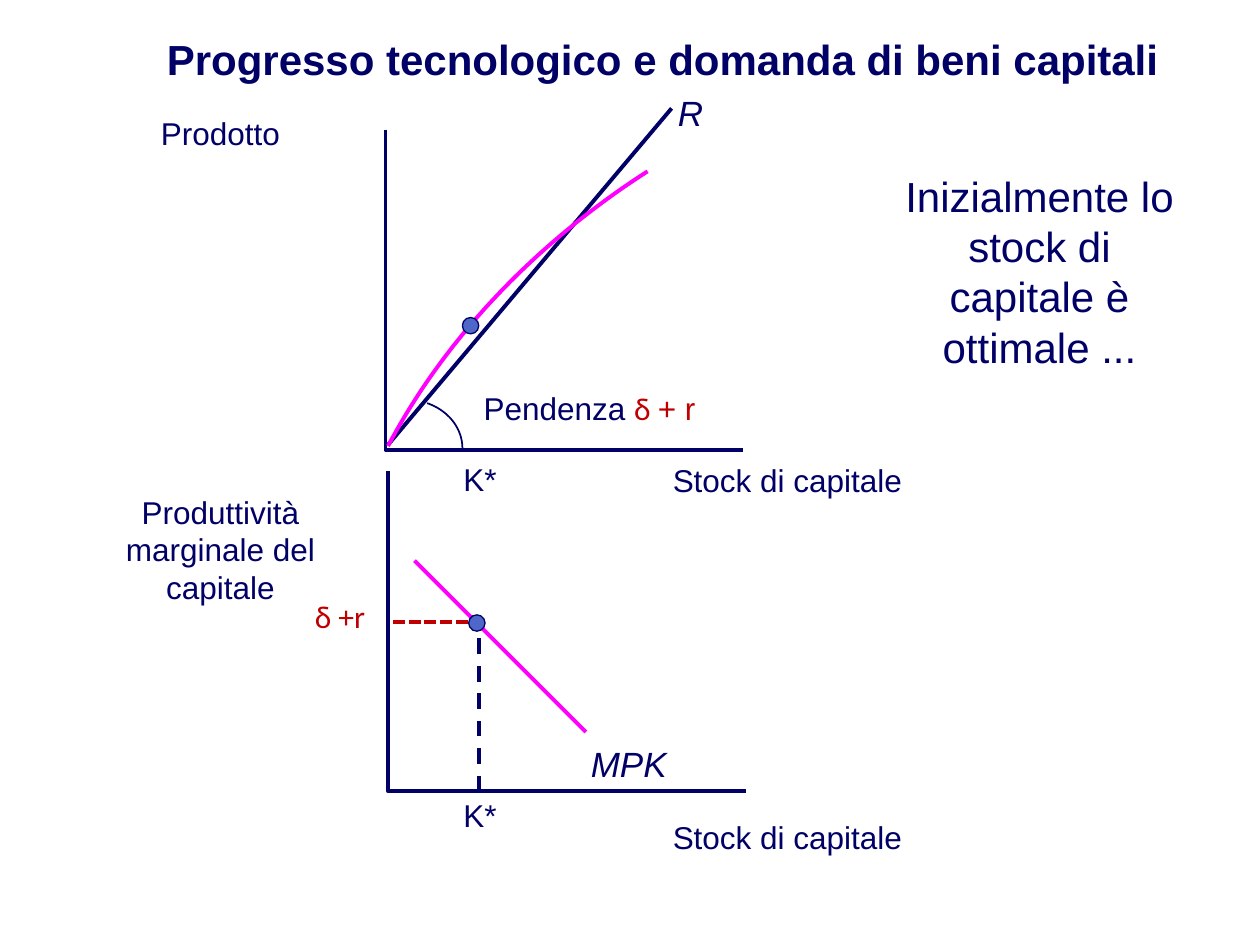
from lxml.etree import SubElement
from pptx import Presentation
from pptx.dml.color import RGBColor
from pptx.enum.dml import MSO_LINE
from pptx.enum.shapes import MSO_CONNECTOR, MSO_SHAPE
from pptx.enum.text import MSO_ANCHOR, PP_ALIGN
from pptx.oxml.ns import qn
from pptx.util import Inches, Pt

COLORS = {
    "navy": "000066",
    "magenta": "FF00FF",
    "red": "C00000",
    "blue": "4E67C8",
    "white": "FFFFFF",
}


def color(name):
    return RGBColor.from_string(COLORS[name])


def write_text(shape, runs, size=18, bold=False, italic=False,
               align=PP_ALIGN.CENTER, anchor=MSO_ANCHOR.TOP, wrap=True):
    """Fill a shape with one paragraph of (text, font, color) runs."""
    frame = shape.text_frame
    frame.word_wrap = wrap
    frame.vertical_anchor = anchor
    paragraph = frame.paragraphs[0]
    paragraph.alignment = align
    if isinstance(runs, str):
        runs = [(runs, "Arial", "navy")]
    for text, font_name, color_name in runs:
        run = paragraph.add_run()
        run.text = text
        run.font.name = font_name
        run.font.size = Pt(size)
        run.font.bold = bold
        run.font.italic = italic
        run.font.color.rgb = color(color_name)


def bezier(start, control_1, control_2, end, steps=40):
    """Points along a cubic curve."""
    points = []
    for step in range(steps + 1):
        t = step / steps
        weights = ((1 - t) ** 3, 3 * t * (1 - t) ** 2, 3 * t * t * (1 - t), t ** 3)
        points.append(tuple(
            sum(weight * value for weight, value in zip(weights, values))
            for values in zip(start, control_1, control_2, end)))
    return points


class DiagramSlide:
    def __init__(self, slide, line_width=2.25):
        self.shapes = slide.shapes
        self.line_width = line_width

    def outline(self, shape, color_name, width=None):
        shape.line.color.rgb = color(color_name)
        shape.line.width = Pt(width or self.line_width)

    def text(self, left, top, width, height, runs, **style):
        box = self.shapes.add_textbox(
            Inches(left), Inches(top), Inches(width), Inches(height))
        write_text(box, runs, **style)

    def line(self, start, end, color_name="navy", dash=None):
        connector = self.shapes.add_connector(
            MSO_CONNECTOR.STRAIGHT, *(Inches(value) for value in start + end))
        SubElement(connector._element.spPr, qn("a:effectLst"))
        self.outline(connector, color_name)
        if dash:
            connector.line.dash_style = dash

    def path_line(self, points, color_name="navy", width=None):
        corners = [(Inches(x), Inches(y)) for x, y in points]
        builder = self.shapes.build_freeform(*corners[0], scale=1.0)
        builder.add_line_segments(corners[1:], close=False)
        shape = builder.convert_to_shape()
        shape.shadow.inherit = False
        shape.fill.background()
        self.outline(shape, color_name, width)

    def axes(self, left, top, width=2.84, height=2.54):
        bottom = top + height
        self.path_line([(left, top), (left, bottom), (left + width, bottom)])

    def dot(self, left, top, size=0.13):
        shape = self.shapes.add_shape(
            MSO_SHAPE.OVAL, Inches(left), Inches(top), Inches(size), Inches(size))
        shape.shadow.inherit = False
        shape.fill.solid()
        shape.fill.fore_color.rgb = color("blue")
        self.outline(shape, "navy", 0.75)

    def label_box(self, left, top, width, height, runs, **style):
        shape = self.shapes.add_shape(
            MSO_SHAPE.RECTANGLE, Inches(left), Inches(top), Inches(width), Inches(height))
        shape.shadow.inherit = False
        shape.fill.solid()
        shape.fill.fore_color.rgb = color("white")
        shape.line.fill.background()
        write_text(shape, runs, **style)


def main():
    presentation = Presentation()
    presentation.slide_width = Inches(10)
    presentation.slide_height = Inches(7.5)
    slide = presentation.slides.add_slide(presentation.slide_layouts[6])
    diagram = DiagramSlide(slide)

    # Title and comment
    diagram.text(0.52, 0.13, 9.48, 0.67, "Progresso tecnologico e domanda di beni capitali",
                 size=24, bold=True, anchor=MSO_ANCHOR.MIDDLE)
    diagram.text(7, 1.11, 2.5, 2.08, "Inizialmente lo stock di capitale è ottimale ...",
                 size=24, anchor=MSO_ANCHOR.MIDDLE)

    # Axes of both charts
    diagram.axes(3.08, 3.74)
    diagram.axes(3.06, 1.03)
    diagram.text(0.5, 0.86, 2.5, 0.4, "Prodotto")
    diagram.text(0.5, 3.86, 2.5, 1.01, "Produttività marginale del capitale")
    for stock_top, optimum_top in ((3.61, 3.6), (6.44, 6.27)):
        diagram.text(5, stock_top, 2.5, 0.4, "Stock di capitale")
        diagram.text(3.58, optimum_top, 0.47, 0.4, "K*", align=PP_ALIGN.LEFT, wrap=False)

    # Upper chart: cost line, its slope angle and the output curve
    diagram.path_line(bezier((3.39, 3.2), (3.56, 3.26), (3.67, 3.4), (3.67, 3.56)), width=1)
    diagram.line((3.08, 3.53), (5.33, 0.86))
    diagram.text(5.19, 0.68, 0.58, 0.43, "R", size=20, italic=True)
    diagram.path_line(bezier((5.14, 1.36), (4.24, 1.94), (3.53, 2.69), (3.08, 3.54)), "magenta")
    diagram.text(3.74, 3.04, 1.9, 0.4,
                 [("Pendenza ", "Arial", "navy"), ("δ ", "Calibri", "red"),
                  ("+ r", "Arial", "red")],
                 align=PP_ALIGN.LEFT, wrap=False)

    # Lower chart: marginal product and optimal stock
    diagram.line((3.8, 6.28), (3.8, 4.96), dash=MSO_LINE.DASH)
    diagram.line((3.29, 4.45), (4.65, 5.81), "magenta")
    diagram.text(4.5, 5.84, 0.98, 0.43, "MPK", size=20, italic=True)
    diagram.label_box(2.4, 4.69, 0.63, 0.4, [("δ +r", "Calibri", "red")],
                      align=PP_ALIGN.LEFT)
    diagram.line((3.12, 4.94), (3.72, 4.94), "red", MSO_LINE.SQUARE_DOT)

    # Optimum points
    diagram.dot(3.67, 2.52)
    diagram.dot(3.72, 4.88)

    presentation.save("out.pptx")


if __name__ == "__main__":
    main()
